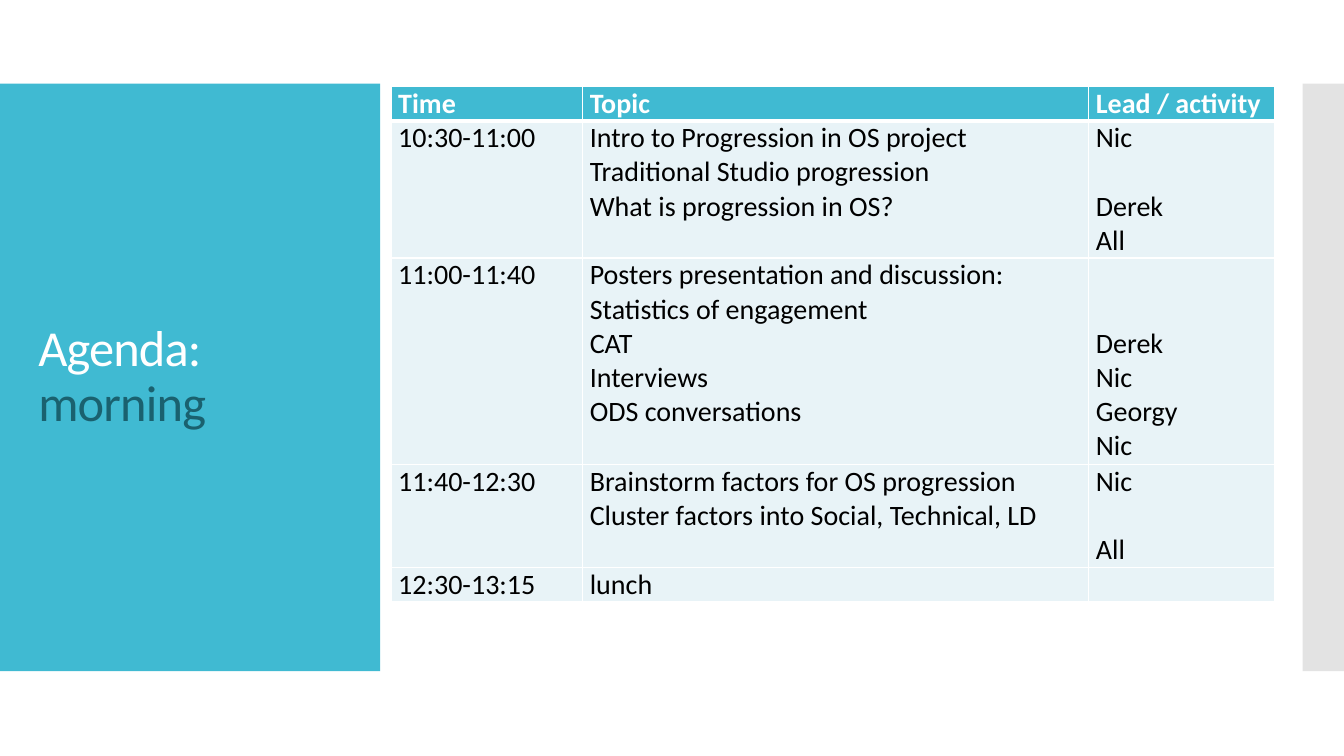
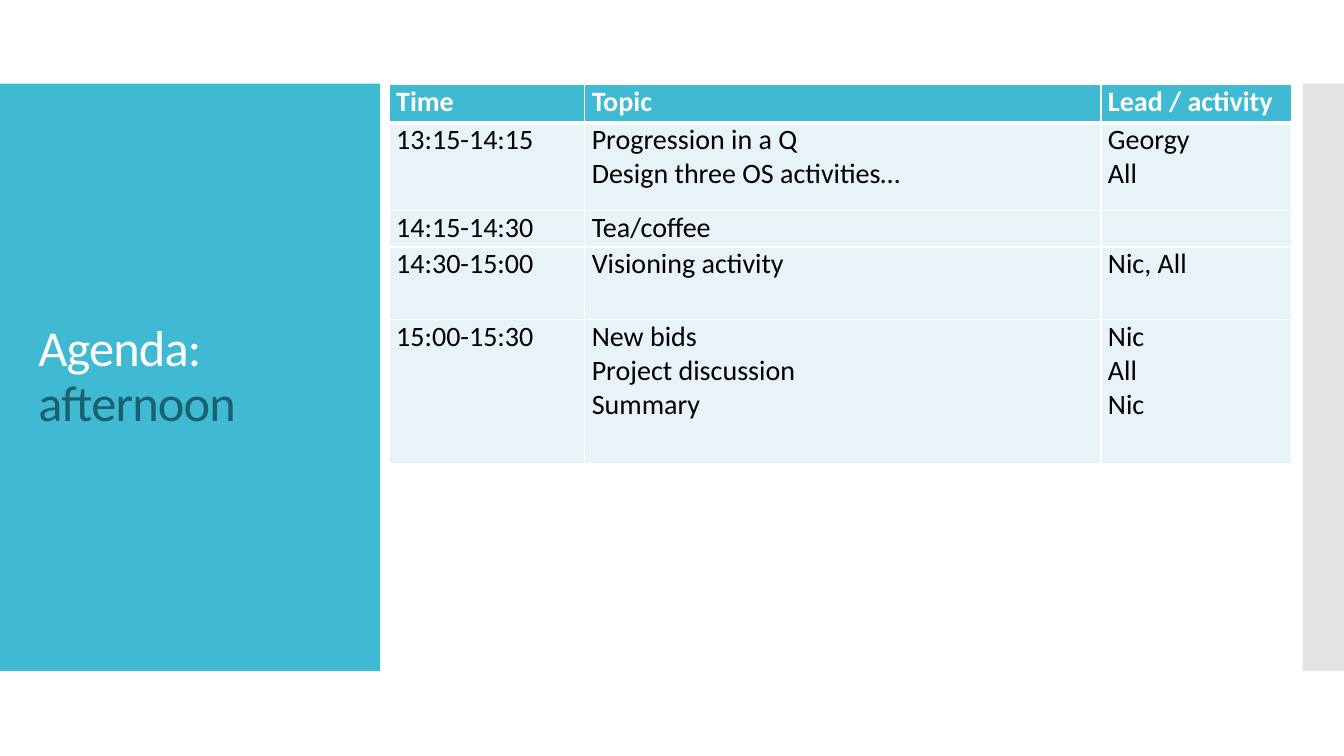
from copy import deepcopy
from dataclasses import dataclass

from lxml.etree import SubElement
from pptx import Presentation
from pptx.dml.color import RGBColor
from pptx.enum.shapes import MSO_SHAPE
from pptx.enum.text import MSO_ANCHOR, MSO_AUTO_SIZE, PP_ALIGN
from pptx.oxml import parse_xml
from pptx.oxml.ns import nsdecls, qn
from pptx.util import Emu, Pt

EMU_PER_PX = 9144
FONT = "Calibri"
TABLE_SIZE = 20
LINE_HEIGHT = 24.4
COLORS = {
    "accent": "40BAD2",
    "accent_dark": "1A616F",
    "edge": "C8C8C8",
    "cell": "E8F3F7",
    "white": "FFFFFF",
    "black": "000000",
}
HEADERS = ("Time", "Topic", "Lead / activity")


@dataclass(frozen=True)
class Box:
    left: int
    top: int
    width: int
    height: int


@dataclass(frozen=True)
class Band:
    box: Box
    color: str
    opacity: int = 100


@dataclass(frozen=True)
class Line:
    text: str
    lines_before: int = 0


@dataclass(frozen=True)
class Session:
    height: int
    time: str
    topics: tuple[str, ...]
    leads: tuple[Line, ...] = ()


@dataclass(frozen=True)
class Agenda:
    period: str
    left: int
    top: int
    column_widths: tuple[int, int, int]
    header_height: int
    sessions: tuple[Session, ...]


BANDS = (
    Band(Box(0, 83, 377, 583), "accent"),
    Band(Box(1292, 83, 41, 583), "edge", 50),
)
TITLE_BOX = Box(28, 123, 322, 503)

AGENDAS = (
    Agenda("morning", 388, 86, (190, 502, 184), 34, (
        Session(136, "10:30-11:00",
                ("Intro to Progression in OS project", "Traditional Studio progression",
                 "What is progression in OS?"),
                (Line("Nic"), Line("Derek", 1), Line("All"))),
        Session(205, "11:00-11:40",
                ("Posters presentation and discussion:", "Statistics of engagement",
                 "CAT", "Interviews", "ODS conversations"),
                (Line("Derek", 2), Line("Nic"), Line("Georgy"), Line("Nic"))),
        Session(102, "11:40-12:30",
                ("Brainstorm factors for OS progression",
                 "Cluster factors into Social, Technical, LD"),
                (Line("Nic"), Line("All", 1))),
        Session(34, "12:30-13:15", ("lunch",)),
    )),
    Agenda("afternoon", 386, 84, (194, 512, 189), 38, (
        Session(87, "13:15-14:15", ("Progression in a Q", "Design three OS activities…"),
                (Line("Georgy"), Line("All"))),
        Session(36, "14:15-14:30", ("Tea/coffee",)),
        Session(72, "14:30-15:00", ("Visioning activity",), (Line("Nic, All"),)),
        Session(143, "15:00-15:30", ("New bids", "Project discussion", "Summary"),
                (Line("Nic"), Line("All"), Line("Nic"))),
    )),
)


def px(length: int) -> Emu:
    return Emu(length * EMU_PER_PX)


def rgb(name: str) -> RGBColor:
    return RGBColor.from_string(COLORS[name])


def place(shape, box: Box) -> None:
    shape.left, shape.top = px(box.left), px(box.top)
    shape.width, shape.height = px(box.width), px(box.height)


def add_run(paragraph, text: str, size: int, color: str, bold: bool = False):
    run = paragraph.add_run()
    run.text = text
    run.font.name = FONT
    run.font.size = Pt(size)
    run.font.bold = bold
    run.font.color.rgb = rgb(color)
    return run


def move_band_to_layout(slide, layout, band: Band) -> None:
    shape = slide.shapes.add_shape(MSO_SHAPE.RECTANGLE, 0, 0, 0, 0)
    place(shape, band.box)
    shape.shadow.inherit = False
    shape.line.fill.background()
    shape.fill.solid()
    shape.fill.fore_color.rgb = rgb(band.color)
    if band.opacity < 100:
        color = shape.element.spPr.find(qn("a:solidFill"))[0]
        SubElement(color, qn("a:alpha"), val=str(band.opacity * 1000))
    layout.shapes.element.append(shape.element)


def write_title(slide, period: str) -> None:
    title = slide.shapes.title
    place(title, TITLE_BOX)
    frame = title.text_frame
    frame.word_wrap = True
    frame.auto_size = MSO_AUTO_SIZE.NONE
    frame.vertical_anchor = MSO_ANCHOR.MIDDLE
    paragraph = frame.paragraphs[0]
    paragraph.alignment = PP_ALIGN.LEFT
    paragraph.line_spacing = 0.9
    heading = add_run(paragraph, "Agenda:", 36, "white")
    heading.font._element.set("spc", "-60")
    paragraph.add_line_break()
    paragraph._p[-1].append(deepcopy(heading.font._element))
    add_run(paragraph, period, 36, "accent_dark").font._element.set("spc", "-60")


def set_borders(cell, top: int = 1, bottom: int = 1) -> None:
    properties = cell._tc.get_or_add_tcPr()
    widths = {"lnL": 1, "lnR": 1, "lnT": top, "lnB": bottom}
    for position, (tag, width) in enumerate(widths.items()):
        properties.insert(position, parse_xml(
            f'<a:{tag} {nsdecls("a")} w="{Pt(width)}"><a:solidFill>'
            f'<a:srgbClr val="{COLORS["white"]}"/></a:solidFill></a:{tag}>'))


def write_cell(cell, lines: tuple[Line, ...], header: bool) -> None:
    cell.fill.solid()
    cell.fill.fore_color.rgb = rgb("accent" if header else "cell")
    cell.margin_left = cell.margin_right = px(7)
    cell.margin_top = cell.margin_bottom = 0
    for index, line in enumerate(lines):
        frame = cell.text_frame
        paragraph = frame.add_paragraph() if index else frame.paragraphs[0]
        gap = Pt(line.lines_before * LINE_HEIGHT)
        if index:
            paragraph.space_before = gap
        else:
            cell.margin_top = gap
        add_run(paragraph, line.text, TABLE_SIZE, "white" if header else "black", header)


def add_agenda_table(slide, agenda: Agenda) -> None:
    heights = [agenda.header_height, *(session.height for session in agenda.sessions)]
    rows = [tuple((Line(header),) for header in HEADERS)]
    for session in agenda.sessions:
        topics = tuple(Line(topic) for topic in session.topics)
        rows.append(((Line(session.time),), topics, session.leads))
    table = slide.shapes.add_table(
        len(rows), len(HEADERS), px(agenda.left), px(agenda.top),
        px(sum(agenda.column_widths)), px(sum(heights))).table
    table.horz_banding = False
    for column, width in zip(table.columns, agenda.column_widths):
        column.width = px(width)
    for row_index, (row, height) in enumerate(zip(rows, heights)):
        table.rows[row_index].height = px(height)
        for column_index, lines in enumerate(row):
            cell = table.cell(row_index, column_index)
            write_cell(cell, lines, header=row_index == 0)
            set_borders(cell, top=3 if row_index == 1 else 1,
                        bottom=3 if row_index == 0 else 1)


def main() -> None:
    presentation = Presentation()
    presentation.slide_width, presentation.slide_height = px(1333), px(750)
    layout = presentation.slide_layouts.get_by_name("Title Only")
    slides = [presentation.slides.add_slide(layout) for _ in AGENDAS]
    for band in BANDS:
        move_band_to_layout(slides[0], layout, band)
    for slide, agenda in zip(slides, AGENDAS):
        write_title(slide, agenda.period)
        add_agenda_table(slide, agenda)
    presentation.save("out.pptx")


if __name__ == "__main__":
    main()
